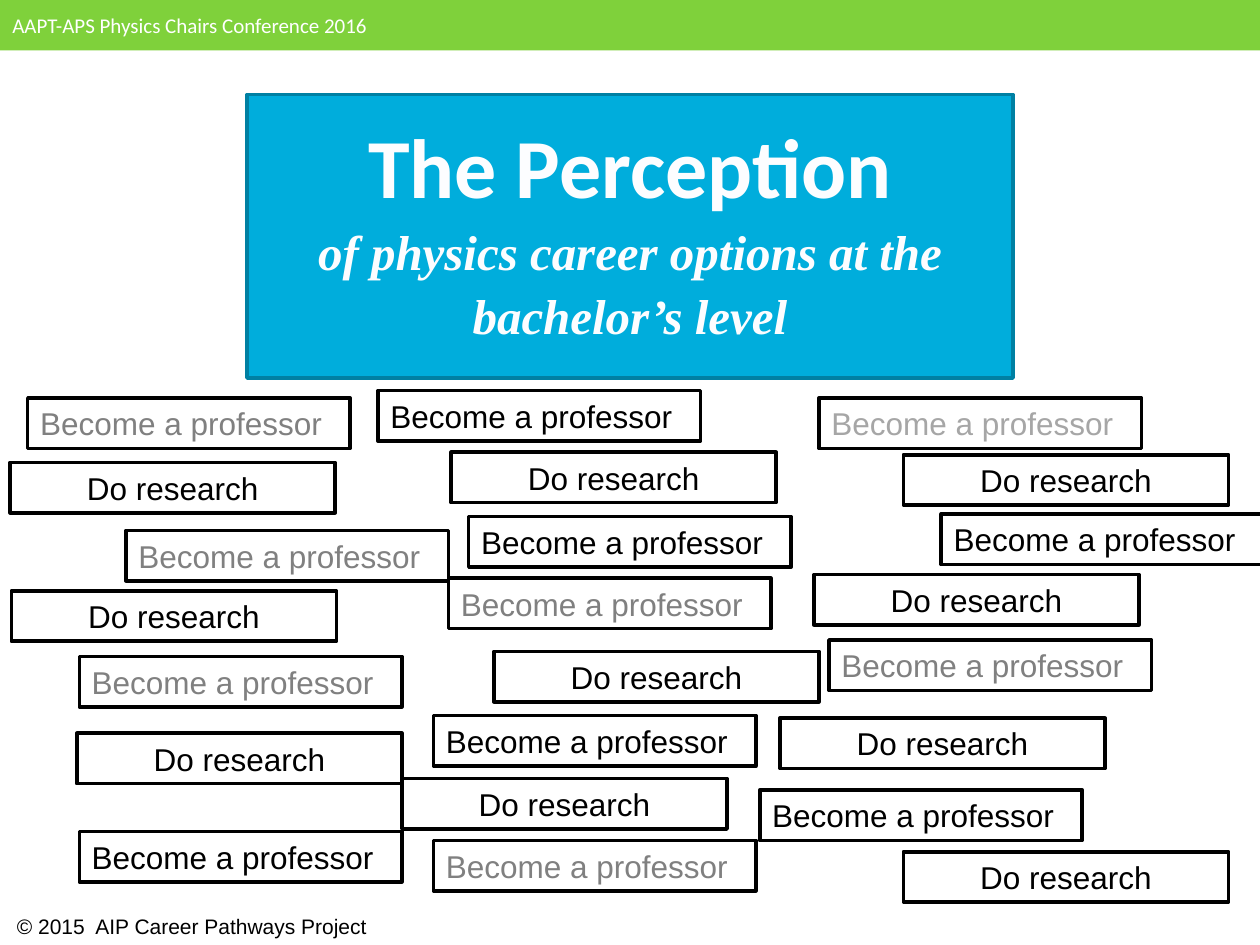
from pptx import Presentation
from pptx import util as u
from pptx.dml.color import RGBColor
from pptx.enum import shapes, text

LEFT, MID = text.PP_ALIGN.LEFT, text.PP_ALIGN.CENTER
BLACK, GREY, PALE = "000000", "808080", "A6A6A6"


def paint(fmt, code):
    """Set a font colour or a fill's foreground from a hex string."""
    fmt.rgb = RGBColor.from_string(code)


class Deck:
    face = "Arial"
    edge = 2.08

    def __init__(self, slide):
        self.slide = slide

    def rect(self, x, y, w, h, fill, line=None):
        box = self.slide.shapes.add_shape(
            shapes.MSO_SHAPE.RECTANGLE, *map(u.Inches, (x, y, w, h)))
        box.shadow.inherit = False
        box.fill.solid()
        paint(box.fill.fore_color, fill)
        if line:
            paint(box.line.color, line)
            box.line.width = u.Pt(self.edge)
        else:
            box.line.fill.background()
        return box

    def label(self, x, y, w, h, words, size, color, face=None):
        box = self.slide.shapes.add_textbox(*map(u.Inches, (x, y, w, h)))
        self.letter(box, [(words, size, face or self.face)], color)

    def letter(self, box, lines, color, align=LEFT,
               anchor=text.MSO_ANCHOR.MIDDLE):
        frame = box.text_frame
        frame.word_wrap = True
        frame.vertical_anchor = anchor
        for i, (words, size, face) in enumerate(lines):
            para = frame.add_paragraph() if i else frame.paragraphs[0]
            para.text = words
            para.alignment = align
            para.font.size = u.Pt(size)
            para.font.name = face
            paint(para.font.color, color)
        return frame

    def card(self, x, y, w, words, color, align):
        box = self.rect(x, y, w, 0.4, "FFFFFF", BLACK)
        self.letter(box, [(words, 18, self.face)], color, align)


prs = Presentation()
prs.slide_width, prs.slide_height = u.Inches(10), u.Inches(7.5)
deck = Deck(prs.slides.add_slide(prs.slide_layouts[6]))

# Top band
deck.rect(0, 0, 10, 0.4, "7FD13B")

# Title panel
panel = deck.rect(1.96, 0.75, 6.08, 2.25, "00ADDC", "0080A3")
frame = deck.letter(panel, [
    ("The Perception", 48, "Calibri"),
    ("of physics career options at the bachelor’s level", 28,
     "Times New Roman"),
], "FCFDFF", MID, text.MSO_ANCHOR.TOP)
frame.margin_top = u.Inches(0.08)
for para in frame.paragraphs:
    para.line_spacing = 1.1
    para.font.bold = True
frame.paragraphs[1].font.italic = True

# Scattered answers, back to front: the two kinds alternate
profs = [
    (0.22, 3.16, GREY), (6.5, 3.16, PALE), (1, 4.21, GREY),
    (6.03, 6.27, BLACK), (0.63, 5.21, GREY), (3.44, 5.68, BLACK),
    (3.56, 4.59, GREY), (3.72, 4.1, BLACK), (3.44, 6.67, GREY),
    (0.63, 6.6, BLACK), (3, 3.1, BLACK), (7.47, 4.08, BLACK),
    (6.58, 5.08, GREY),
]
labs = [
    (7.17, 6.76), (3.19, 6.18), (3.58, 3.59), (6.19, 5.7), (0.08, 3.67),
    (7.17, 3.61), (3.92, 5.17), (0.09, 4.69), (0.61, 5.82), (6.46, 4.56),
]
for i, (x, y, color) in enumerate(profs):
    deck.card(x, y, 2.56, "Become a professor", color, LEFT)
    if i < len(labs):
        deck.card(*labs[i], 2.58, "Do research", BLACK, MID)

# Footer and header text
deck.label(-0.01, 7.2, 9.26, 0.3, " © 2015  AIP Career Pathways Project",
           12, BLACK)
deck.label(0, 0, 4.33, 0.4, "AAPT-APS Physics Chairs Conference 2016",
           12, "FFFFFF", "Calibri")

prs.save("out.pptx")
